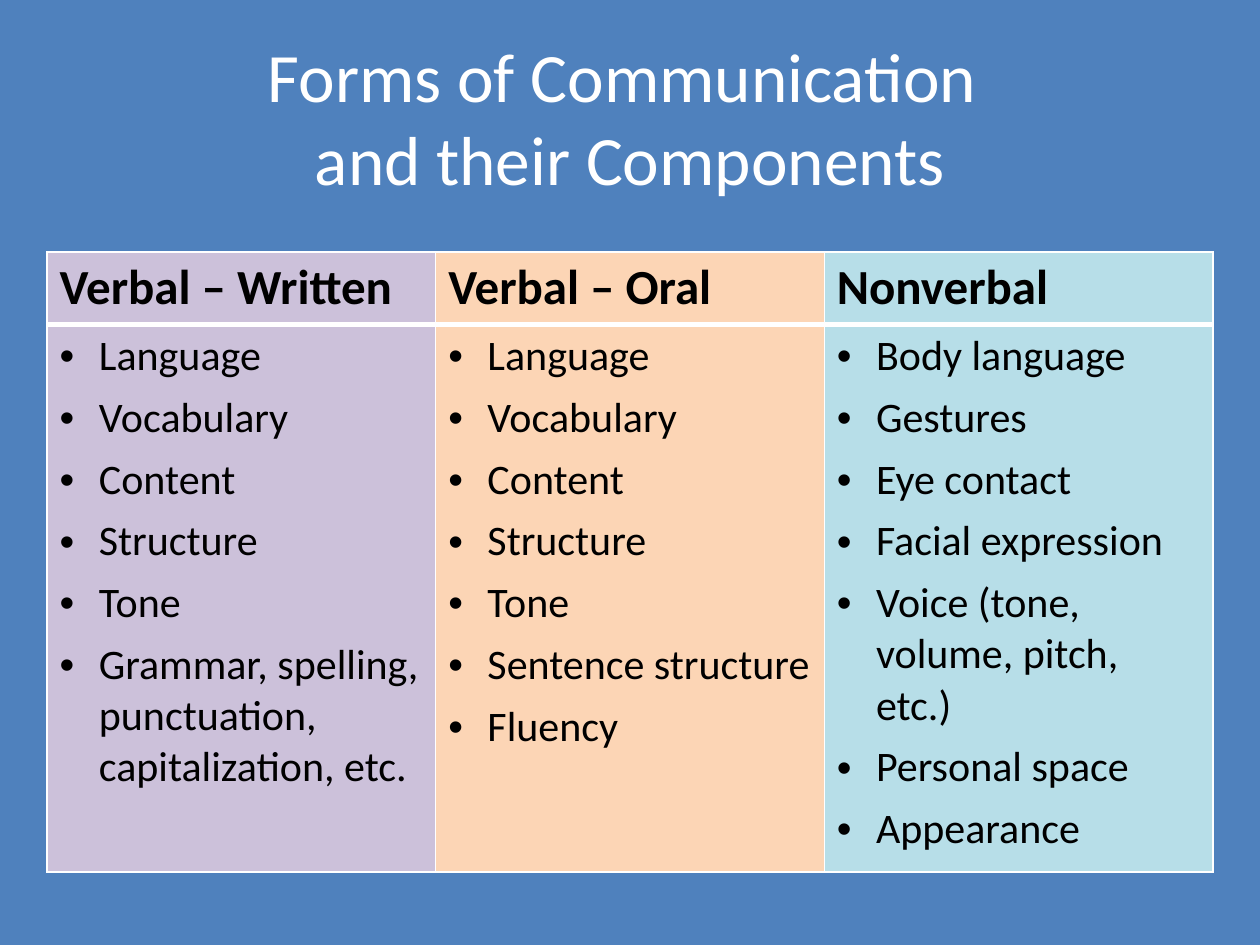
from collections import namedtuple
from copy import deepcopy
from dataclasses import dataclass

from lxml import etree
from pptx import Presentation
from pptx import util as u
from pptx.dml.color import RGBColor
from pptx.enum import text
from pptx.oxml import ns

Box = namedtuple("Box", "left top width height")


@dataclass(frozen=True)
class Theme:
    font: str = "Calibri"
    background: str = "4F81BD"
    light: str = "FFFFFF"
    dark: str = "000000"
    columns: tuple = ("CCC1DA", "FCD5B5", "B7DEE8")
    title_size: float = 39.6
    header_size: int = 28
    body_size: int = 24
    thin_border: int = 1
    thick_border: int = 3


THEME = Theme()
TITLE = "Forms of Communication \vand their Components"
SHARED = ["Language", "Vocabulary", "Content", "Structure", "Tone"]
FORMS = {
    "Verbal – Written": SHARED + ["Grammar, spelling, punctuation, capitalization, etc."],
    "Verbal – Oral": SHARED + ["Sentence structure", "Fluency"],
    "Nonverbal": ["Body language", "Gestures", "Eye contact", "Facial expression",
                  "Voice (tone, volume, pitch, etc.)", "Personal space", "Appearance"],
}


def write(paragraph, content, *, size, color, bold=False, align=text.PP_ALIGN.LEFT):
    paragraph.text = content
    paragraph.alignment = align
    for run in paragraph.runs:
        run.font.name = THEME.font
        run.font.size = u.Pt(size)
        run.font.bold = bold
        run.font.color.rgb = RGBColor.from_string(color)
    for line_break in paragraph._p.findall(ns.qn("a:br")):
        line_break.append(deepcopy(paragraph.runs[0].font._element))


def add_bullet(paragraph, indent=u.Cm(0.79)):
    paragraph.space_after = u.Pt(6)
    properties = paragraph._p.get_or_add_pPr()
    properties.set("marL", str(indent))
    properties.set("indent", str(-indent))
    etree.SubElement(properties, ns.qn("a:buFont"), typeface="Arial")
    etree.SubElement(properties, ns.qn("a:buChar"), char="•")


def format_cell(cell, fill, **border_widths):
    """Set the borders before the fill, as the schema orders them."""
    properties = cell._tc.get_or_add_tcPr()
    for side in "LRTB":
        width = border_widths.get(side, THEME.thin_border)
        line = etree.SubElement(properties, ns.qn(f"a:ln{side}"), w=str(u.Pt(width)))
        solid = etree.SubElement(line, ns.qn("a:solidFill"))
        etree.SubElement(solid, ns.qn("a:srgbClr"), val=THEME.light)
    cell.fill.solid()
    cell.fill.fore_color.rgb = RGBColor.from_string(fill)


def place_title(slide, box):
    title = slide.shapes.title
    title.left, title.top, title.width, title.height = box
    frame = title.text_frame
    frame.auto_size = text.MSO_AUTO_SIZE.NONE
    frame.vertical_anchor = text.MSO_ANCHOR.MIDDLE
    write(frame.paragraphs[0], TITLE, size=THEME.title_size, color=THEME.light,
          align=text.PP_ALIGN.CENTER)


def add_forms_table(slide, box, header_height=u.Cm(1.46)):
    table = slide.shapes.add_table(2, len(FORMS), *box).table
    table.rows[0].height = header_height
    table.rows[1].height = box.height - header_height
    for index, ((heading, items), fill) in enumerate(zip(FORMS.items(), THEME.columns)):
        table.columns[index].width = box.width // len(FORMS)
        header, body = table.cell(0, index), table.cell(1, index)
        format_cell(header, fill, B=THEME.thick_border)
        format_cell(body, fill, T=THEME.thick_border)
        write(header.text_frame.paragraphs[0], heading, size=THEME.header_size,
              color=THEME.dark, bold=True)
        frame = body.text_frame
        for number, item in enumerate(items):
            paragraph = frame.add_paragraph() if number else frame.paragraphs[0]
            write(paragraph, item, size=THEME.body_size, color=THEME.dark)
            add_bullet(paragraph)


def main():
    presentation = Presentation()
    presentation.slide_width, presentation.slide_height = u.Cm(25.4), u.Cm(19.05)
    slide = presentation.slides.add_slide(presentation.slide_layouts[5])
    slide.background.fill.solid()
    slide.background.fill.fore_color.rgb = RGBColor.from_string(THEME.background)
    place_title(slide, Box(u.Cm(1.27), u.Cm(0.76), u.Cm(22.86), u.Cm(3.18)))
    add_forms_table(slide, Box(u.Cm(0.95), u.Cm(5.08), u.Cm(23.5), u.Cm(12.5)))
    presentation.save("out.pptx")


if __name__ == "__main__":
    main()
